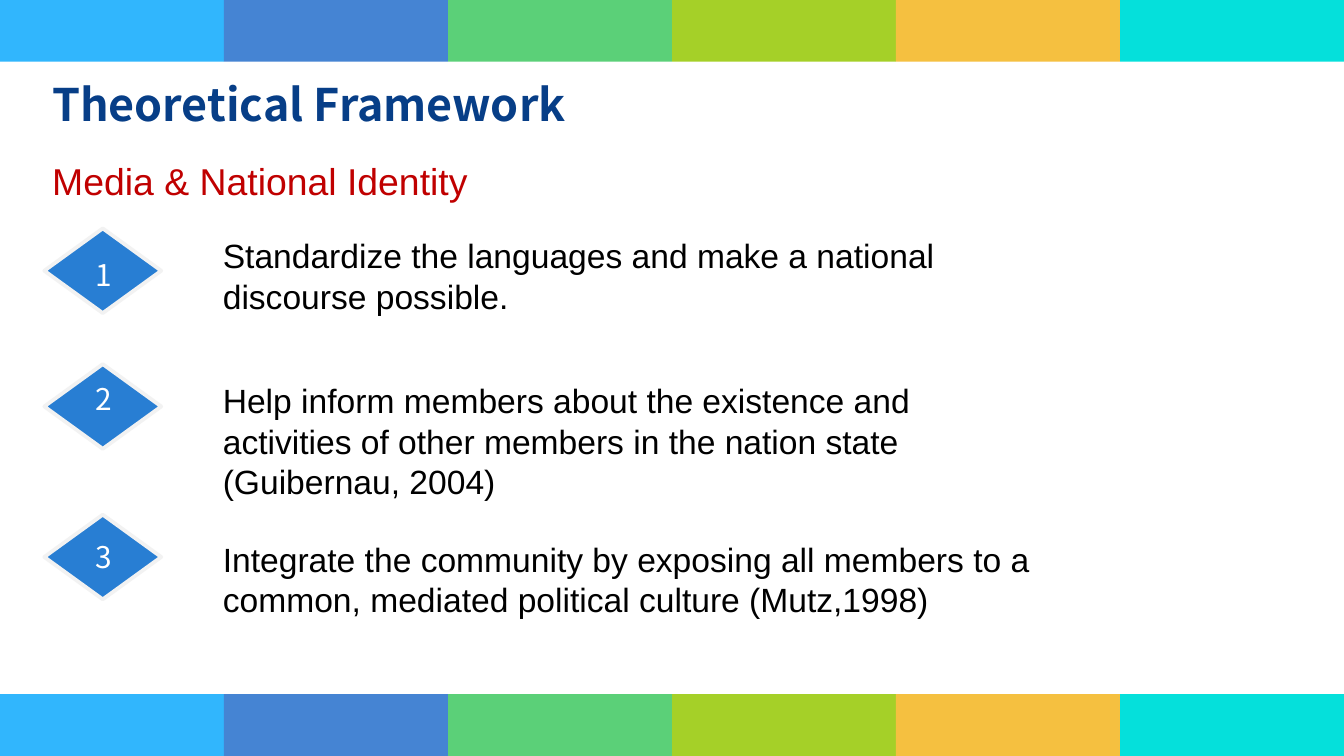
from pptx import Presentation
from pptx.dml.color import RGBColor
from pptx.enum.shapes import MSO_SHAPE
from pptx.enum.text import MSO_AUTO_SIZE
from pptx.util import Inches, Pt

RECT = MSO_SHAPE.RECTANGLE
DIAMOND = MSO_SHAPE.DIAMOND
GROW = MSO_AUTO_SIZE.SHAPE_TO_FIT_TEXT
SANS = "Noto Sans CJK SC"
ARIAL = "Arial"
WIDE = 10
HIGH = WIDE * 9 / 16
BAND = 0.46
BANDS = ["31B6FD", "4584D3", "5BD078", "A5D028", "F5C040", "05E0DB"]
ITEMS = [
    (1.70, 1.86, 1.70, 6.90, 0.71,
     ["Standardize the languages and make a national",
      "discourse possible."]),
    (2.71, 2.78, 2.78, 5.93, 1.01,
     ["Help inform members about the existence and",
      "activities of other members in the nation state (Guibernau, 2004)"]),
    (3.83, 3.96, 3.96, 6.48, 0.71,
     ["Integrate the community by exposing all members to a common, "
      "mediated political culture (Mutz,1998)"]),
]


def color(code):
    return RGBColor.from_string(code)


def add_shape(shapes, kind, box, fill, line=None):
    shape = shapes.add_shape(kind, *map(Inches, box))
    shape.shadow.inherit = False
    shape.fill.solid()
    shape.fill.fore_color.rgb = color(fill)
    if line:
        shape.line.color.rgb = color(line)
        shape.line.width = Pt(2)
    else:
        shape.line.fill.background()


def add_text(shapes, box, lines, size, font, ink, bold=False, wrap=True, space=None):
    frame = shapes.add_textbox(*map(Inches, box)).text_frame
    frame.word_wrap = wrap
    frame.auto_size = GROW
    for i, line in enumerate(lines):
        para = frame.add_paragraph() if i else frame.paragraphs[0]
        if space:
            para.line_spacing = space
        run = para.add_run()
        run.text = line
        run.font.size = Pt(size)
        run.font.name = font
        run.font.bold = bold
        run.font.color.rgb = color(ink)


def add_bands(shapes, top):
    group = shapes.add_group_shape()
    step = WIDE / len(BANDS)
    for i, fill in enumerate(BANDS):
        add_shape(group.shapes, RECT, (i * step, top, step, BAND), fill)


def add_item(shapes, mark, item):
    top, mark_top, text_top, width, height, lines = item
    add_shape(shapes, DIAMOND, (0.33, top, 0.87, 0.63), "287ED3", "F2F2F2")
    add_text(shapes, (0.61, mark_top, 0.33, 0.37), [str(mark)], 16, SANS,
             "FFFFFF", wrap=False)
    add_text(shapes, (1.56, text_top, width, height), lines, 18, ARIAL, "000000")


def main():
    deck = Presentation()
    deck.slide_width = Inches(WIDE)
    deck.slide_height = Inches(HIGH)
    shapes = deck.slides.add_slide(deck.slide_layouts[6]).shapes
    for top in (0, HIGH - BAND):
        add_bands(shapes, top)
    add_text(shapes, (0.29, 0.52, 4.72, 0.51), ["Theoretical Framework"],
             24, SANS, "073E87", bold=True)
    add_text(shapes, (0.29, 1.03, 9.15, 0.5), ["Media & National Identity"],
             20, ARIAL, "C00000", space=1.3)
    for mark, item in enumerate(ITEMS, 1):
        add_item(shapes, mark, item)
    deck.save("out.pptx")


if __name__ == "__main__":
    main()
